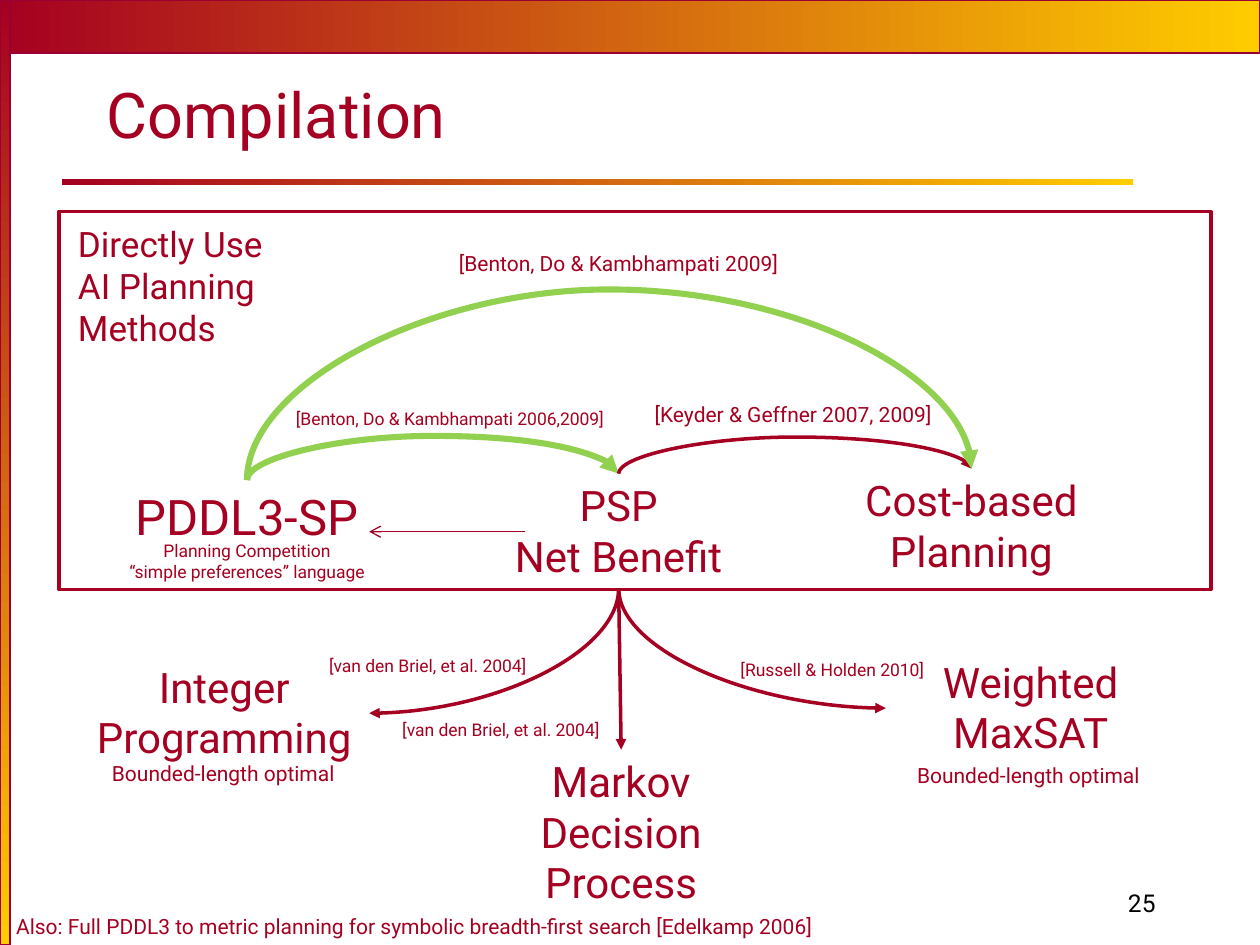
from typing import NamedTuple, Optional

from lxml import etree
from pptx import Presentation
from pptx.dml.color import RGBColor
from pptx.enum.shapes import MSO_CONNECTOR, MSO_SHAPE
from pptx.enum.text import MSO_ANCHOR, MSO_AUTO_SIZE, PP_ALIGN
from pptx.oxml.ns import qn
from pptx.util import Inches, Pt

RECT = MSO_SHAPE.RECTANGLE
STRAIGHT, CURVE = MSO_CONNECTOR.STRAIGHT, MSO_CONNECTOR.CURVE
LEFT, CENTER, RIGHT = PP_ALIGN.LEFT, PP_ALIGN.CENTER, PP_ALIGN.RIGHT
TOP, BOTTOM = MSO_ANCHOR.TOP, MSO_ANCHOR.BOTTOM
GROW, FIXED = MSO_AUTO_SIZE.SHAPE_TO_FIT_TEXT, MSO_AUTO_SIZE.NONE

COLORS = {"red": "A50021", "gold": "FFCC00", "edge": "990033",
          "green": "92D050", "black": "000000"}
FONT = "Roboto"

# The slide is a grid of 100 columns by 75 rows
WIDTH, HEIGHT = Inches(10), Inches(7.5)
COL, ROW = WIDTH / 100, HEIGHT / 75


class Box(NamedTuple):
    col: float
    row: float
    cols: float
    rows: float


class Point(NamedTuple):
    col: float
    row: float


class Label(NamedTuple):
    text: str
    box: Box
    size: int
    align: PP_ALIGN = CENTER
    wrap: bool = True


class Arrow(NamedTuple):
    start: Point
    end: Point
    color: str = "red"
    width: float = 2
    peak: Optional[float] = None  # row that an arch rises to
    bend: bool = False            # leaves downwards, arrives sideways
    head: str = "triangle"


def rgb(name: str) -> RGBColor:
    return RGBColor.from_string(COLORS[name])


def place(box: Box) -> tuple[int, int, int, int]:
    return (round(box.col * COL), round(box.row * ROW),
            round(box.cols * COL), round(box.rows * ROW))


def add_rect(s, box: Box, line: Optional[str] = None, width: float = 0.75,
             angle: Optional[int] = None) -> None:
    sp = s.shapes.add_shape(RECT, *place(box))
    sp.shadow.inherit = False
    if angle is None:
        sp.fill.background()
    else:
        sp.fill.gradient()
        sp.fill.gradient_angle = angle
        for stop, name in zip(sp.fill.gradient_stops, ("red", "gold")):
            stop.color.rgb = rgb(name)
    if line:
        sp.line.color.rgb = rgb(line)
        sp.line.width = Pt(width)
    else:
        sp.line.fill.background()


def add_text(s, text: str, box: Box, *, size: int, align: PP_ALIGN = CENTER,
             wrap: bool = True, color: str = "red", anchor: MSO_ANCHOR = TOP,
             fit: MSO_AUTO_SIZE = GROW) -> None:
    tf = s.shapes.add_textbox(*place(box)).text_frame
    tf.word_wrap, tf.auto_size, tf.vertical_anchor = wrap, fit, anchor
    tf.text = text
    for p in tf.paragraphs:
        p.alignment = align
        for r in p.runs:
            r.font.name, r.font.size = FONT, Pt(size)
            r.font.color.rgb = rgb(color)


def turn_curve(cxn, a: Arrow) -> None:
    """Turn a curved connector so that it leaves its start vertically."""
    spPr = cxn._element.spPr
    xfrm, geom = spPr.find(qn("a:xfrm")), spPr.find(qn("a:prstGeom"))
    left, top, w, h = cxn.left, cxn.top, cxn.width, cxn.height
    cxn.left, cxn.top = left + (w - h) // 2, top + (h - w) // 2
    cxn.width, cxn.height = h, w
    for flip in ("flipH", "flipV"):
        xfrm.attrib.pop(flip, None)
    if a.bend:
        geom.set("prst", "curvedConnector2")
        rightwards = a.end.col > a.start.col
        xfrm.set("rot", str((270 if rightwards else 90) * 60000))
        if rightwards:
            xfrm.set("flipH", "1")
        return
    xfrm.set("rot", str(90 * 60000))
    xfrm.set("flipH", "1")
    xfrm.set("flipV", "1")
    rise = (a.start.row - a.peak) / (a.start.row - a.end.row)
    guides = geom.find(qn("a:avLst"))
    if guides is None:
        guides = etree.SubElement(geom, qn("a:avLst"))
    etree.SubElement(guides, qn("a:gd"), name="adj1",
                     fmla=f"val {round(rise * 100000)}")


def add_arrow(s, a: Arrow) -> None:
    curved = a.bend or a.peak is not None
    cxn = s.shapes.add_connector(
        CURVE if curved else STRAIGHT,
        round(a.start.col * COL), round(a.start.row * ROW),
        round(a.end.col * COL), round(a.end.row * ROW))
    if curved:
        turn_curve(cxn, a)
    cxn.line.color.rgb = rgb(a.color)
    cxn.line.width = Pt(a.width)
    spPr = cxn._element.spPr
    etree.SubElement(spPr.find(qn("a:ln")), qn("a:tailEnd"), type=a.head)
    etree.SubElement(spPr, qn("a:effectLst"))


# Anchor points shared by several arrows
PDDL, PSP, COST = Point(19.6, 38.1), Point(49.1, 37.6), Point(77.1, 37.2)
PSP_BASE = Point(49.1, 46.7)

NODES = [
    Label("PDDL3-SP", Box(8.6, 38.1, 22, 5.7), 28),
    Label("Planning Competition\n“simple preferences” language",
          Box(8.1, 42.4, 23, 4.4), 10),
    Label("PSP\nNet Benefit", Box(37.6, 37.6, 23, 9.1), 24),
    Label("Cost-based\nPlanning", Box(65.1, 37.2, 24, 9.1), 24),
    Label("Integer\nProgramming", Box(6.3, 52, 23, 9.1), 24),
    Label("Weighted\nMaxSAT", Box(70.3, 51.6, 23, 9.1), 24),
    Label("Markov Decision Process", Box(37.8, 59.5, 23, 13.1), 24),
]
NOTES = [
    Label("[Keyder & Geffner 2007, 2009]", Box(50.5, 31.4, 24.9, 3), 12, CENTER, False),
    Label("[Benton, Do & Kambhampati 2006,2009]", Box(22, 31.9, 27.4, 2.7), 10, CENTER, False),
    Label("[Benton, Do & Kambhampati 2009]", Box(35, 19.4, 28.2, 3), 12, CENTER, False),
    Label("[van den Briel, et al. 2004]", Box(24.6, 51.5, 18.7, 2.7), 10, CENTER, False),
    Label("[Russell & Holden 2010]", Box(57.5, 51.8, 17.1, 2.7), 10, CENTER, False),
    Label("[van den Briel, et al. 2004]", Box(30.4, 56.6, 18.7, 2.7), 10, CENTER, False),
    Label("Also: Full PDDL3 to metric planning for symbolic breadth-first search "
          "[Edelkamp 2006]", Box(0.3, 72, 66.7, 3), 12, LEFT, False),
    Label("Directly Use\nAI Planning Methods", Box(5.2, 17.2, 27.5, 7.7), 20, LEFT),
    Label("Bounded-length optimal", Box(71.8, 60, 19.9, 3), 12, LEFT, False),
    Label("Bounded-length optimal", Box(7.9, 59.9, 19.9, 3), 12, LEFT, False),
]
ARROWS = [
    Arrow(PDDL, PSP, "green", 3.5, peak=34.6),
    Arrow(PSP, COST, peak=34.7),
    Arrow(PDDL, COST, "green", 3.5, peak=23),
    Arrow(PSP_BASE, Point(29.3, 56.6), bend=True),
    Arrow(PSP_BASE, Point(70.3, 56.2), bend=True),
    Arrow(PSP_BASE, Point(49.3, 59.5)),
    Arrow(Point(41.7, 42.2), Point(29.3, 42.2), width=0.75, head="arrow"),
]


def main() -> None:
    prs = Presentation()
    prs.slide_width, prs.slide_height = WIDTH, HEIGHT
    s = prs.slides.add_slide(prs.slide_layouts[6])

    # Gradient bars and the frame
    add_rect(s, Box(0, 0, 100, 4.2), "edge", angle=0)
    add_rect(s, Box(4.9, 14.2, 85, 0.5), angle=0)
    add_rect(s, Box(0, 0, 0.8, 75), "edge", angle=270)
    add_rect(s, Box(4.7, 16.8, 91.4, 30), "red", 2)

    # Title and slide number
    add_text(s, "Compilation", Box(7.5, 5, 85.2, 7.5), size=36, align=LEFT,
             anchor=BOTTOM, fit=FIXED)
    add_text(s, "25", Box(71.9, 68.3, 20.8, 5), size=14, align=RIGHT,
             color="black", anchor=BOTTOM, fit=FIXED)

    # Diagram
    for node in NODES:
        add_text(s, **node._asdict())
    for arrow in ARROWS:
        add_arrow(s, arrow)
    for note in NOTES:
        add_text(s, **note._asdict())

    prs.save("out.pptx")


if __name__ == "__main__":
    main()
